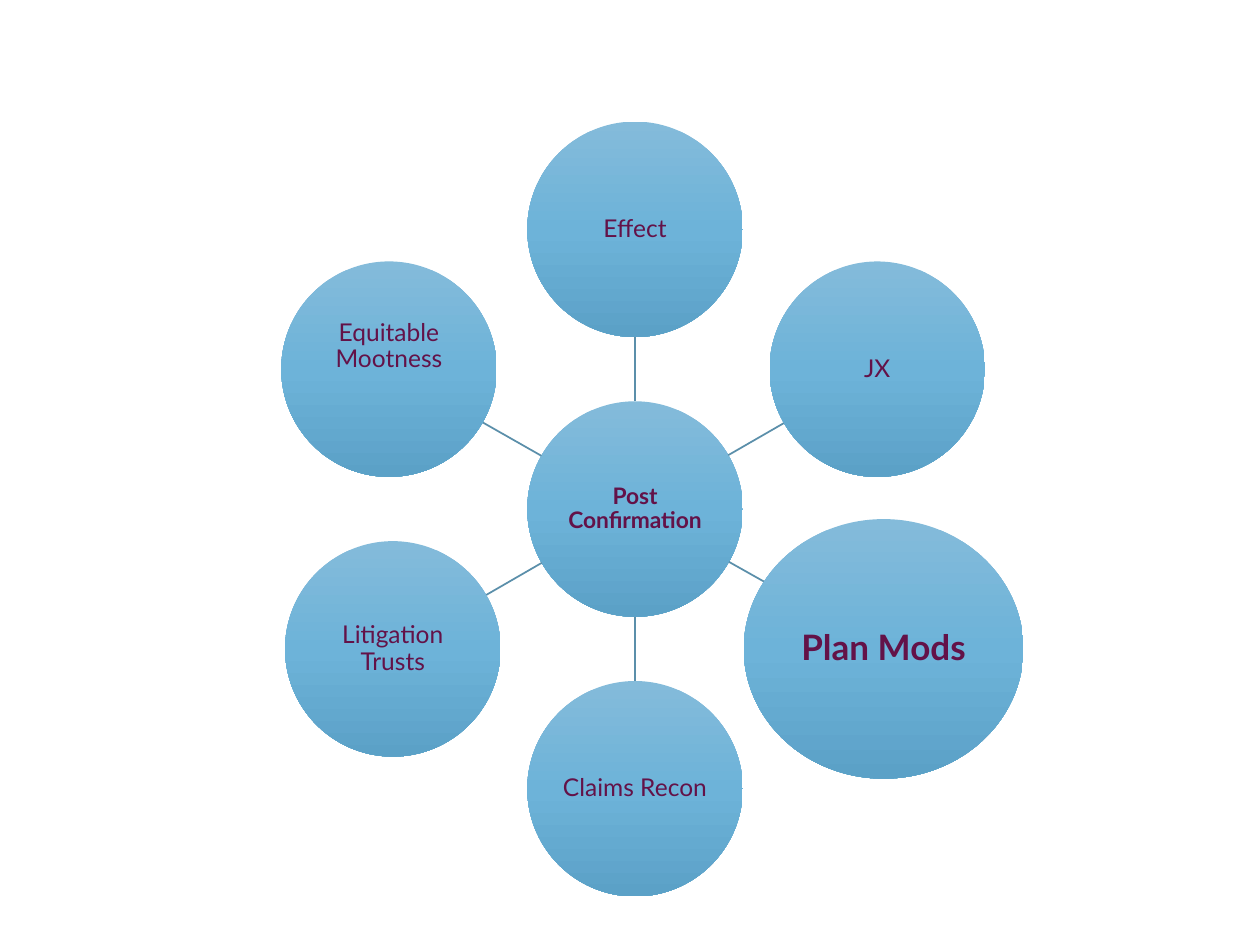
from copy import deepcopy
from math import cos, hypot, radians, sin

from pptx import Presentation
from pptx.dml.color import RGBColor
from pptx.enum.shapes import MSO_CONNECTOR, MSO_SHAPE
from pptx.enum.text import MSO_ANCHOR, PP_ALIGN
from pptx.oxml.ns import qn
from pptx.util import Inches, Pt

COLORS = {"top": "84BBDA", "middle": "6DB3D9", "bottom": "5BA1C7",
          "spoke": "5B8FAA", "text": "631248"}
FONT = "Lato"
HUB_CENTER = (5.04, 4.04)
ORBIT = 2.22
CIRCLE = (1.71, 1.71)
INSET = 0.01

# Topics run clockwise from the top, at equal angles.
TOPICS = [
    {"text": "Effect"},
    {"text": "JX"},
    {"text": "Plan Mods", "size": (2.22, 2.06), "nudge": 0.05,
     "font_size": 20, "bold": True},
    {"text": "Claims Recon"},
    {"text": "Litigation Trusts"},
    {"text": "Equitable Mootness", "nudge": -0.03, "bottom_inset": 0.37},
]


def color(name):
    return RGBColor.from_string(COLORS[name])


def fill_gradient(shape):
    """Fill from top to bottom with three evenly spaced colours."""
    shape.fill.gradient()
    shape.fill.gradient_angle = 270
    stop_list = shape._element.spPr.find(qn("a:gradFill")).find(qn("a:gsLst"))
    stop_list.append(deepcopy(stop_list[-1]))
    names = ("top", "middle", "bottom")
    for index, (stop, name) in enumerate(zip(shape.fill.gradient_stops, names)):
        stop.position = index / 2
        stop.color.rgb = color(name)


def write_text(shape, text, font_size=14, bold=False, bottom_inset=INSET):
    frame = shape.text_frame
    frame.word_wrap = True
    frame.vertical_anchor = MSO_ANCHOR.MIDDLE
    frame.margin_left = frame.margin_right = frame.margin_top = Inches(INSET)
    frame.margin_bottom = Inches(bottom_inset)
    paragraph = frame.paragraphs[0]
    paragraph.alignment = PP_ALIGN.CENTER
    paragraph.line_spacing = 0.9
    run = paragraph.add_run()
    run.text = text
    run.font.name = FONT
    run.font.size = Pt(font_size)
    run.font.bold = bold
    run.font.color.rgb = color("text")


def add_bubble(slide, center, text, size=CIRCLE, **text_format):
    (x, y), (width, height) = center, size
    shape = slide.shapes.add_shape(
        MSO_SHAPE.OVAL, Inches(x - width / 2), Inches(y - height / 2),
        Inches(width), Inches(height))
    shape.shadow.inherit = False
    shape.line.fill.background()
    fill_gradient(shape)
    write_text(shape, text, **text_format)


def edge_point(center, size, target):
    """Return where the line from center to target leaves the ellipse."""
    dx, dy = target[0] - center[0], target[1] - center[1]
    share = 1 / hypot(dx / (size[0] / 2), dy / (size[1] / 2))
    return center[0] + dx * share, center[1] + dy * share


def add_spoke(slide, hub, topic, topic_size):
    points = edge_point(hub, CIRCLE, topic) + edge_point(topic, topic_size, hub)
    spoke = slide.shapes.add_connector(
        MSO_CONNECTOR.STRAIGHT, *(Inches(value) for value in points))
    spoke.line.color.rgb = color("spoke")
    spoke.line.width = Pt(1)
    properties = spoke._element.spPr
    properties.append(properties.makeelement(qn("a:effectLst"), {}))


def add_radial_diagram(slide, hub, orbit, title, topics):
    add_bubble(slide, hub, title, font_size=13, bold=True)
    for index, topic in enumerate(topics):
        options = dict(topic)
        angle = radians(360 / len(topics) * index - 90)
        center = (hub[0] + orbit * cos(angle) + options.pop("nudge", 0),
                  hub[1] + orbit * sin(angle))
        add_spoke(slide, hub, center, options.get("size", CIRCLE))
        add_bubble(slide, center, **options)


def main():
    presentation = Presentation()
    presentation.slide_width = Inches(10)
    presentation.slide_height = Inches(7.5)
    slide = presentation.slides.add_slide(presentation.slide_layouts[6])
    add_radial_diagram(slide, HUB_CENTER, ORBIT, "Post Confirmation", TOPICS)
    presentation.save("out.pptx")


if __name__ == "__main__":
    main()
